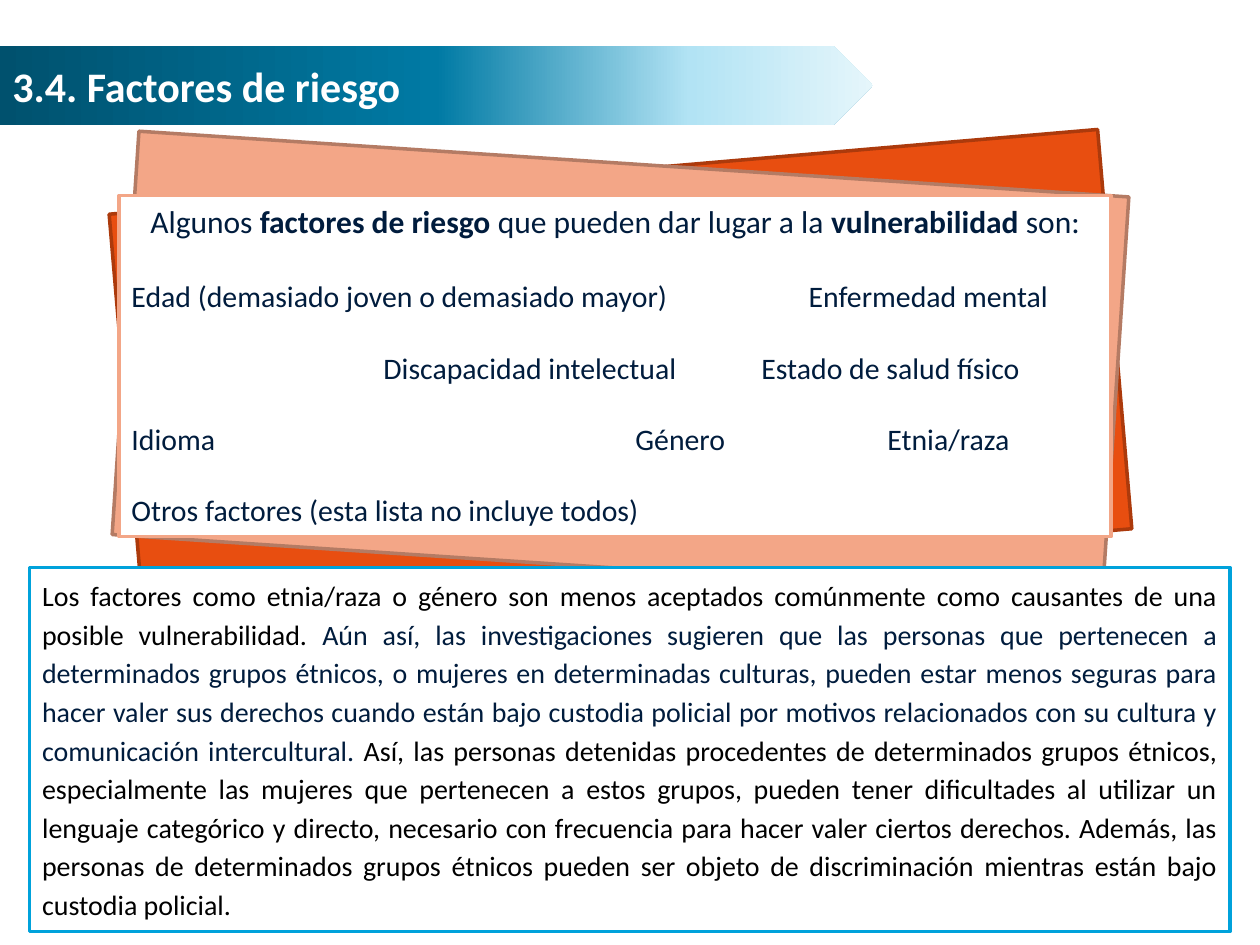
"""Build the slide on risk factors for vulnerability."""
from copy import deepcopy

from lxml import etree
from pptx import Presentation
from pptx.dml.color import RGBColor
from pptx.enum.shapes import MSO_SHAPE
from pptx.enum.text import MSO_ANCHOR, MSO_AUTO_SIZE, PP_ALIGN
from pptx.oxml.ns import qn
from pptx.util import Cm, Pt

RECT, PENTAGON = MSO_SHAPE.RECTANGLE, MSO_SHAPE.PENTAGON
TOP, MIDDLE = MSO_ANCHOR.TOP, MSO_ANCHOR.MIDDLE
LEFT, CENTER, JUSTIFY = PP_ALIGN.LEFT, PP_ALIGN.CENTER, PP_ALIGN.JUSTIFY
GROW = MSO_AUTO_SIZE.SHAPE_TO_FIT_TEXT

WHITE = RGBColor(0xFF, 0xFF, 0xFF)
BLACK = RGBColor(0x00, 0x00, 0x00)
NAVY = RGBColor(0x00, 0x1C, 0x3D)
BLUE = RGBColor(0x00, 0xA2, 0xDB)
ORANGE = RGBColor(0xE8, 0x4E, 0x10)
RUST = RGBColor(0xAC, 0x3A, 0x0C)
SALMON = RGBColor(0xF3, 0xA6, 0x87)
BROWN = RGBColor(0xB4, 0x7B, 0x64)
BANNER_STOPS = [
    (0, RGBColor(0x00, 0x51, 0x6E)),
    (0.5, RGBColor(0x00, 0x7A, 0xA4)),
    (0.79, RGBColor(0xB2, 0xE3, 0xF4)),
    (1, RGBColor(0xE5, 0xF6, 0xFB)),
]

TITLE = "3.4. Factores de riesgo"
INTRO = [
    ("Algunos ", False),
    ("factores de riesgo ", True),
    ("que pueden dar lugar a la ", False),
    ("vulnerabilidad", True),
    (" son:", False),
]
FACTORS = [
    ("Edad (demasiado joven o demasiado mayor)\tEnfermedad mental", [13.65],
     {"space_before": Pt(22)}),
    ("\tDiscapacidad intelectual\tEstado de salud físico", [5.08, 12.7],
     {"line_spacing": 2.0}),
    ("Idioma\tGénero\tEtnia/raza", [10.16, 15.24], {"line_spacing": 2.0}),
    ("Otros factores (esta lista no incluye todos)", [], {"line_spacing": 2.0}),
]
EXPLANATION = [
    ("Los factores como etnia/raza o género son menos aceptados comúnmente como "
     "causantes de una posible vulnerabilidad. ", BLACK),
    ("Aún así, las investigaciones sugieren que las personas que pertenecen a "
     "determinados grupos étnicos, o mujeres en determinadas culturas, pueden estar "
     "menos seguras para hacer valer sus derechos cuando están bajo custodia policial "
     "por motivos relacionados con su cultura y comunicación intercultural.", NAVY),
    (" Así, las personas detenidas procedentes de determinados grupos étnicos, "
     "especialmente las mujeres que pertenecen a estos grupos, pueden tener "
     "dificultades al utilizar un lenguaje categórico y directo, necesario con "
     "frecuencia para hacer valer ciertos derechos. Además, las personas de "
     "determinados grupos étnicos pueden ser objeto de discriminación mientras están "
     "bajo custodia policial.", BLACK),
]


def set_all(target, values):
    for name, value in values.items():
        setattr(target, name, value)


def add_panel(slide, kind, box, fill=None, line=None, rotation=0):
    panel = slide.shapes.add_shape(kind, *map(Cm, box))
    panel.shadow.inherit = False
    panel.rotation = rotation
    if fill is not None:
        panel.fill.solid()
        panel.fill.fore_color.rgb = fill
    if line is None:
        panel.line.fill.background()
    else:
        panel.line.color.rgb = line
        panel.line.width = Pt(2)
    return panel


def fill_gradient(panel, stops):
    panel.fill.gradient()
    panel.fill.gradient_angle = 0
    stop_list = panel._element.spPr.find(qn("a:gradFill")).find(qn("a:gsLst"))
    while len(stop_list) < len(stops):
        stop_list.append(deepcopy(stop_list[0]))
    for stop, (position, color) in zip(panel.fill.gradient_stops, stops):
        stop.position = position
        stop.color.rgb = color


def write(paragraph, runs, size, layout, tabs=()):
    set_all(paragraph, layout)
    for text, color, bold in runs:
        run = paragraph.add_run()
        run.text = text
        set_all(run.font, {"name": "Calibri", "size": Pt(size), "bold": bold})
        run.font.color.rgb = color
    if tabs:
        tab_list = etree.SubElement(paragraph._p.get_or_add_pPr(), qn("a:tabLst"))
        for position in tabs:
            etree.SubElement(tab_list, qn("a:tab"), pos=str(Cm(position)), algn="l")


def main():
    prs = Presentation()
    set_all(prs, {"slide_width": Cm(25.4), "slide_height": Cm(19.05)})
    slide = prs.slides.add_slide(prs.slide_layouts[6])

    banner = add_panel(slide, PENTAGON, (0, 0.92, 17.6, 1.6))
    fill_gradient(banner, BANNER_STOPS)
    set_all(banner.text_frame, {"word_wrap": True, "vertical_anchor": MIDDLE})
    write(banner.text_frame.paragraphs[0], [(TITLE, WHITE, True)], 24,
          {"alignment": LEFT})

    add_panel(slide, RECT, (2.51, 3.45, 20, 8.08), ORANGE, RUST, 355.1)
    add_panel(slide, RECT, (2.51, 3.3, 20, 8.15), SALMON, BROWN, 3.8)

    growing = {"word_wrap": True, "vertical_anchor": TOP, "auto_size": GROW}
    factors = add_panel(slide, RECT, (2.4, 3.94, 20, 6.88), WHITE, SALMON).text_frame
    set_all(factors, growing)
    write(factors.paragraphs[0], [(text, NAVY, bold) for text, bold in INTRO], 18,
          {"alignment": CENTER})
    for text, tabs, spacing in FACTORS:
        write(factors.add_paragraph(), [(text, NAVY, False)], 17,
              {"alignment": LEFT, **spacing}, tabs)

    explanation = add_panel(slide, RECT, (0.6, 11.44, 24.2, 7.34), WHITE, BLUE).text_frame
    set_all(explanation, growing)
    write(explanation.paragraphs[0],
          [(text, color, False) for text, color in EXPLANATION], 16,
          {"alignment": JUSTIFY, "line_spacing": 1.15})

    prs.save("out.pptx")


if __name__ == "__main__":
    main()
